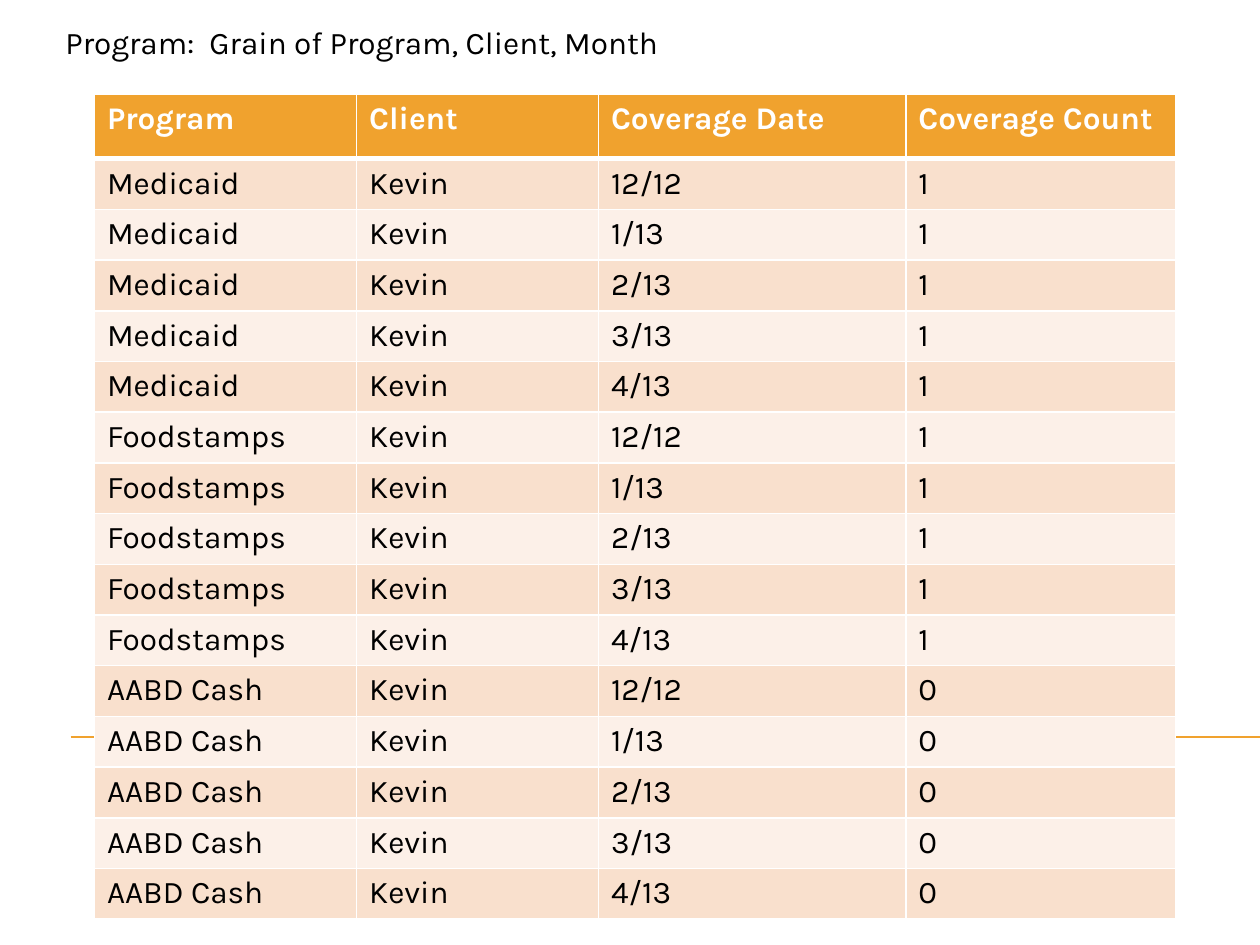
from dataclasses import dataclass
from itertools import product

from lxml import etree
from pptx import Presentation
from pptx import util as u
from pptx.dml.color import RGBColor
from pptx.enum import shapes, text
from pptx.oxml.ns import qn


@dataclass(frozen=True)
class Theme:
    font: str = "Karla"
    size: int = 18
    ink: str = "000000"
    paper: str = "FFFFFF"
    accent: str = "F0A22E"
    bands: tuple = ("F9E0CD", "FCF0E8")
    rule_width: float = 0.75
    border_width: int = 1
    header_border_width: int = 3


class SlideBuilder:
    def __init__(self, page, theme):
        self.page = page
        self.theme = theme

    def style_text(self, frame, color, bold=False):
        for para in frame.paragraphs:
            for span in para.runs:
                span.font.name = self.theme.font
                span.font.size = u.Pt(self.theme.size)
                span.font.bold = bold
                span.font.color.rgb = RGBColor.from_string(color)

    def rule(self, left, right, y):
        line = self.page.shapes.add_connector(
            shapes.MSO_CONNECTOR.STRAIGHT,
            u.Inches(left), u.Inches(y), u.Inches(right), u.Inches(y))
        line.line.color.rgb = RGBColor.from_string(self.theme.accent)
        line.line.width = u.Pt(self.theme.rule_width)
        etree.SubElement(line._element.spPr, qn("a:effectLst"))

    def label(self, words, left, top, width, height):
        box = self.page.shapes.add_textbox(
            u.Inches(left), u.Inches(top), u.Inches(width), u.Inches(height))
        frame = box.text_frame
        frame.word_wrap = True
        frame.auto_size = text.MSO_AUTO_SIZE.SHAPE_TO_FIT_TEXT
        frame.text = words
        self.style_text(frame, self.theme.ink)

    def border(self, cell, bottom_width):
        properties = cell._tc.get_or_add_tcPr()
        widths = dict.fromkeys(("lnL", "lnR", "lnT"), self.theme.border_width)
        widths["lnB"] = bottom_width
        # Border lines must come before the fill in the cell properties
        for place, (side, width) in enumerate(widths.items()):
            edge = etree.Element(qn(f"a:{side}"), w=str(u.Pt(width)))
            fill = etree.SubElement(edge, qn("a:solidFill"))
            etree.SubElement(fill, qn("a:srgbClr"), val=self.theme.paper)
            properties.insert(place, edge)

    def cell(self, cell, words, fill, color, bold, bottom_width):
        cell.text = words
        self.style_text(cell.text_frame, color, bold)
        cell.fill.solid()
        cell.fill.fore_color.rgb = RGBColor.from_string(fill)
        self.border(cell, bottom_width)

    def table(self, rows, left, top, widths, height, header_height):
        theme = self.theme
        table = self.page.shapes.add_table(
            len(rows), len(widths), u.Inches(left), u.Inches(top),
            u.Inches(sum(widths)), u.Inches(height)).table
        for column, width in zip(table.columns, widths):
            column.width = u.Inches(width)
        body_height = (height - header_height) / (len(rows) - 1)
        for index, values in enumerate(rows):
            header = index == 0
            table.rows[index].height = u.Inches(header_height if header else body_height)
            fill = theme.accent if header else theme.bands[(index - 1) % 2]
            color = theme.paper if header else theme.ink
            bottom = theme.header_border_width if header else theme.border_width
            for column, words in enumerate(values):
                self.cell(table.cell(index, column), words, fill, color, header, bottom)


def main():
    deck = Presentation()
    deck.slide_width, deck.slide_height = u.Inches(10), u.Inches(7.5)
    page = deck.slides.add_slide(deck.slide_layouts[6])
    builder = SlideBuilder(page, Theme())

    # Background rule
    builder.rule(0.56, 10, 5.85)

    # Coverage table: every program in every month
    coverage = {"Medicaid": "1", "Foodstamps": "1", "AABD Cash": "0"}
    months = ("12/12", "1/13", "2/13", "3/13", "4/13")
    rows = [("Program", "Client", "Coverage Date", "Coverage Count")]
    rows += [(program, "Kevin", month, coverage[program])
             for program, month in product(coverage, months)]
    builder.table(rows, left=0.75, top=0.75, widths=(2.08, 1.92, 2.44, 2.14),
                  height=6.55, header_height=0.51)

    # Heading
    builder.label("Program:  Grain of Program, Client, Month", 0.42, 0.13, 7.92, 0.4)

    deck.save("out.pptx")


if __name__ == "__main__":
    main()
